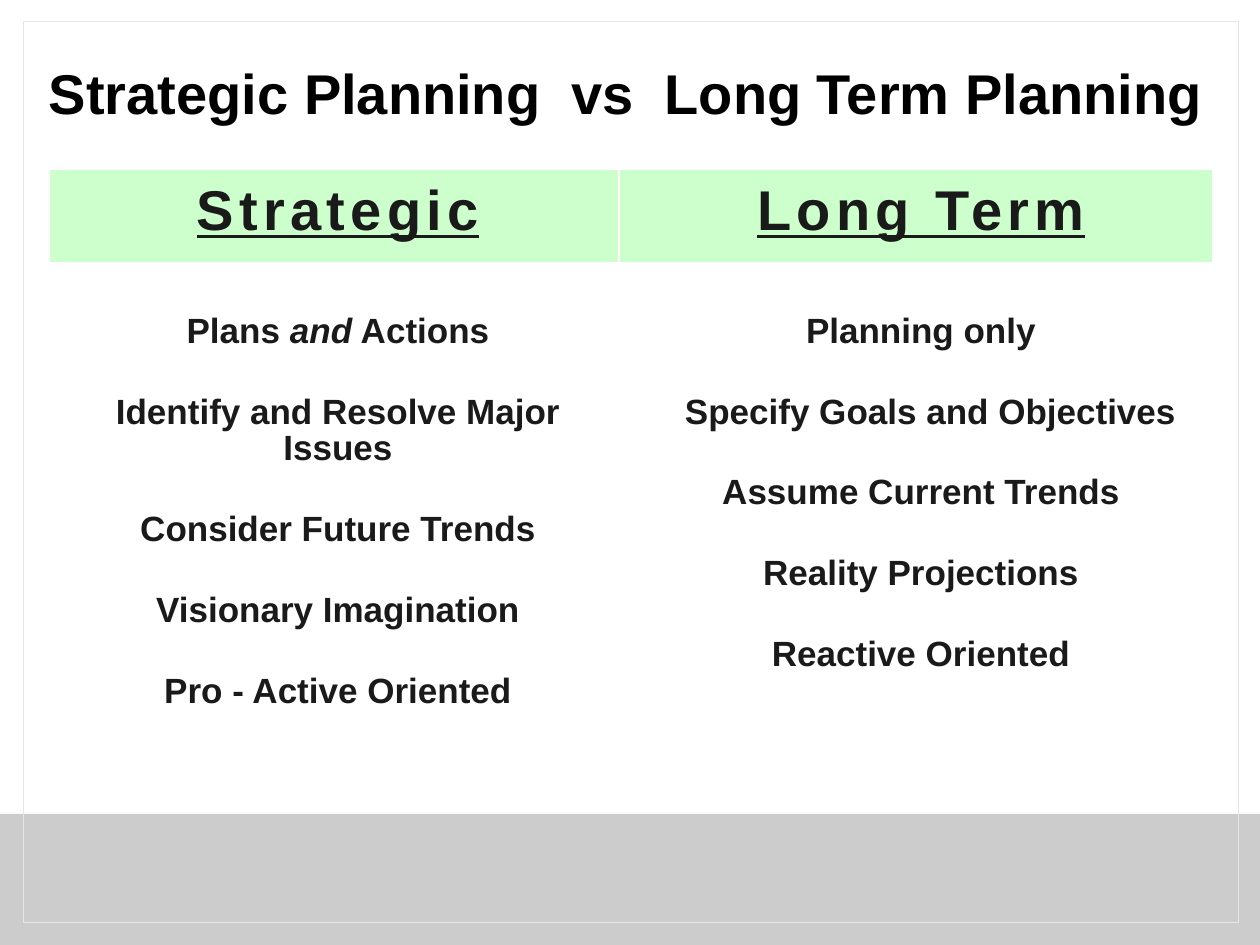
from dataclasses import dataclass

from lxml import etree
from pptx import Presentation
from pptx.dml.color import RGBColor
from pptx.enum.shapes import MSO_SHAPE
from pptx.enum.text import MSO_ANCHOR, MSO_AUTO_SIZE, PP_ALIGN
from pptx.oxml.ns import qn
from pptx.util import Emu, Pt

RECTANGLE = MSO_SHAPE.RECTANGLE
MIDDLE = MSO_ANCHOR.MIDDLE
TOP = MSO_ANCHOR.TOP
NO_AUTOFIT = MSO_AUTO_SIZE.NONE
LEFT = PP_ALIGN.LEFT
CENTER = PP_ALIGN.CENTER

WHITE = RGBColor(0xFF, 0xFF, 0xFF)
BLACK = RGBColor(0x00, 0x00, 0x00)
INK = RGBColor(0x1A, 0x1A, 0x1A)
GREEN = RGBColor(0xCC, 0xFF, 0xCC)
GRAY = RGBColor(0xCC, 0xCC, 0xCC)
PALE = RGBColor(0xE7, 0xE6, 0xE6)

FONT = "Arial"
PX_PER_INCH = 126
INDENT = 9
HEADER_TOP = 15
BODY_TOP = 51
ROW_HEIGHTS = (95, 474)


@dataclass(frozen=True)
class Span:
    text: str
    italic: bool = False


@dataclass(frozen=True)
class Line:
    spans: tuple[Span, ...]
    indent: int = INDENT


@dataclass(frozen=True)
class Column:
    heading: str
    width: int
    lines: tuple[Line, ...]


def line(text: str, indent: int = INDENT) -> Line:
    return Line((Span(text),), indent)


COLUMNS = (
    Column("Strategic", 571, (
        Line((Span("Plans "), Span("and", italic=True), Span(" Actions"))),
        line("Identify and Resolve Major Issues"),
        line("Consider Future Trends"),
        line("Visionary Imagination"),
        line("Pro - Active Oriented"),
    )),
    Column("Long Term", 595, (
        line("Planning only"),
        line("Specify Goals and Objectives", indent=28),
        line("Assume Current Trends"),
        line("Reality Projections"),
        line("Reactive Oriented"),
    )),
)


def px(length: int) -> Emu:
    return Emu(round(length * 914400 / PX_PER_INCH))


def add_span(para, text: str, size: int, color: RGBColor):
    span = para.add_run()
    span.text = text
    span.font.name = FONT
    span.font.size = Pt(size)
    span.font.bold = True
    span.font.color.rgb = color
    return span


def add_rectangle(page, left: int, top: int, width: int, height: int):
    box = page.shapes.add_shape(RECTANGLE, px(left), px(top), px(width), px(height))
    box.shadow.inherit = False
    return box


def draw_backdrop(page) -> None:
    band = add_rectangle(page, 0, 814, 1260, 131)
    band.fill.solid()
    band.fill.fore_color.rgb = GRAY
    band.line.fill.background()
    frame = add_rectangle(page, 23, 21, 1215, 902)
    frame.fill.background()
    frame.line.color.rgb = PALE
    frame.line.width = Pt(0.5)


def draw_title(page, text: str) -> None:
    title = page.shapes.title
    title.left, title.top, title.width, title.height = px(21), px(55), px(1223), px(82)
    frame = title.text_frame
    frame.auto_size = NO_AUTOFIT
    frame.vertical_anchor = MIDDLE
    frame.margin_left = px(28)
    para = frame.paragraphs[0]
    para.alignment = LEFT
    para.line_spacing = 0.9
    add_span(para, text, 32, BLACK)


def set_borders(cell, row: int, column: int) -> None:
    widths = {
        "a:lnL": 1 if column else 2,
        "a:lnR": 2 if column else 1,
        "a:lnT": 1 if row else 2,
        "a:lnB": 2 if row else 1,
    }
    properties = cell._tc.get_or_add_tcPr()
    for position, (tag, width) in enumerate(widths.items()):
        border = etree.Element(qn(tag), w=str(Pt(width)))
        fill = etree.SubElement(border, qn("a:solidFill"))
        etree.SubElement(fill, qn("a:srgbClr"), val=str(WHITE))
        properties.insert(position, border)


def format_cell(cell, row: int, column: int, margin_top: int) -> None:
    cell.margin_left = cell.margin_right = cell.margin_bottom = 0
    cell.margin_top = px(margin_top)
    cell.vertical_anchor = TOP
    set_borders(cell, row, column)


def format_para(para, indent: int) -> None:
    para.alignment = CENTER
    para.line_spacing = 0.94
    properties = para._p.get_or_add_pPr()
    properties.set("marL", str(px(indent)))
    properties.set("indent", "0")


def fill_heading(cell, text: str) -> None:
    cell.fill.solid()
    cell.fill.fore_color.rgb = GREEN
    para = cell.text_frame.paragraphs[0]
    format_para(para, INDENT)
    span = add_span(para, text, 32, INK)
    span.font.underline = True
    span.font._element.set("spc", "300")


def fill_body(cell, lines: tuple[Line, ...]) -> None:
    cell.fill.background()
    frame = cell.text_frame
    for number, entry in enumerate(lines):
        para = frame.add_paragraph() if number else frame.paragraphs[0]
        format_para(para, entry.indent)
        if number:
            para.space_before = Pt(25.2)
        for part in entry.spans:
            add_span(para, part.text, 20, INK).font.italic = part.italic


def draw_table(page, columns: tuple[Column, ...]) -> None:
    width = sum(column.width for column in columns)
    table = page.shapes.add_table(
        len(ROW_HEIGHTS), len(columns), px(48), px(168), px(width), px(sum(ROW_HEIGHTS))
    ).table
    table.first_row = False
    table.horz_banding = False
    for row, height in zip(table.rows, ROW_HEIGHTS):
        row.height = px(height)
    for number, column in enumerate(columns):
        table.columns[number].width = px(column.width)
        heading, body = table.cell(0, number), table.cell(1, number)
        format_cell(heading, 0, number, HEADER_TOP)
        format_cell(body, 1, number, BODY_TOP)
        fill_heading(heading, column.heading)
        fill_body(body, column.lines)


def main() -> None:
    deck = Presentation()
    deck.slide_width, deck.slide_height = px(1260), px(945)
    page = deck.slides.add_slide(deck.slide_layouts[5])
    page.background.fill.solid()
    page.background.fill.fore_color.rgb = WHITE
    draw_backdrop(page)
    draw_title(page, "Strategic Planning  vs  Long Term Planning")
    draw_table(page, COLUMNS)
    deck.save("out.pptx")


if __name__ == "__main__":
    main()
